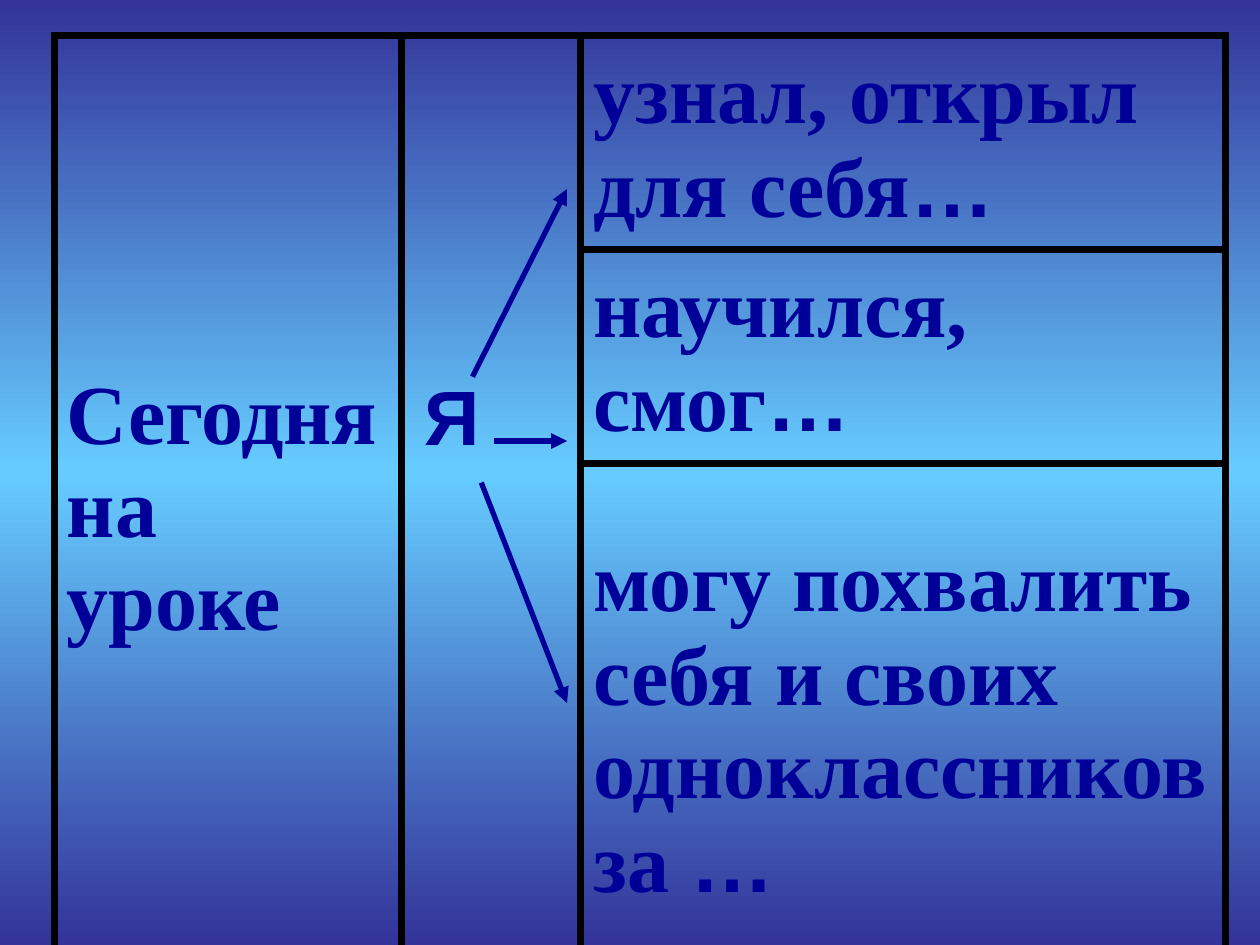
from copy import deepcopy
from dataclasses import dataclass

from lxml import etree
from pptx import Presentation
from pptx.dml.color import RGBColor
from pptx.enum.shapes import MSO_CONNECTOR
from pptx.enum.text import MSO_ANCHOR
from pptx.oxml.ns import qn
from pptx.util import Inches, Pt

STRAIGHT = MSO_CONNECTOR.STRAIGHT
MIDDLE = MSO_ANCHOR.MIDDLE


@dataclass(frozen=True)
class Theme:
    ink: str = "000099"
    border: str = "000000"
    edge: str = "333399"
    glow: str = "66CCFF"
    serif: str = "Times New Roman"
    sans: str = "Arial"
    phrase_size: int = 48
    pronoun_size: int = 44
    border_width: float = 4.5
    arrow_width: float = 3


@dataclass(frozen=True)
class Arrow:
    start: tuple[float, float]
    end: tuple[float, float]


THEME = Theme()
COLUMN_WIDTHS = (2.76, 1.42, 5.12)
ROW_HEIGHTS = (1.7, 1.7, 4.13)
OPENING = "Сегодня на уроке"
ENDINGS = (
    "узнал, открыл для себя",
    "научился, смог",
    "могу похвалить себя и своих одноклассников за ",
)
ARROWS = (
    Arrow((3.75, 2.99), (4.5, 1.5)),
    Arrow((3.82, 3.83), (4.5, 5.58)),
    Arrow((3.92, 3.5), (4.5, 3.5)),
)


def add_text(paragraph, text: str, *, font: str = THEME.serif,
             size: float = THEME.phrase_size) -> None:
    run = paragraph.add_run()
    run.text = text
    run.font.name = font
    run.font.size = Pt(size)
    run.font.bold = True
    run.font.color.rgb = RGBColor.from_string(THEME.ink)


def paint_background(slide) -> None:
    """Vertical gradient that is brightest halfway down."""
    fill = slide.background.fill
    fill.gradient()
    fill.gradient_angle = 90
    first, last = fill.gradient_stops
    for stop in (first, last):
        stop.color.rgb = RGBColor.from_string(THEME.edge)
    first.position, last.position = 0, 1
    stop_list = fill._fill._gradFill.find(qn("a:gsLst"))
    stop_list.insert(1, deepcopy(stop_list[0]))
    middle = fill.gradient_stops[1]
    middle.position = 0.5
    middle.color.rgb = RGBColor.from_string(THEME.glow)


def format_cell(cell) -> None:
    cell.fill.background()
    cell.vertical_anchor = MIDDLE
    properties = cell._tc.get_or_add_tcPr()
    for index, side in enumerate(("a:lnL", "a:lnR", "a:lnT", "a:lnB")):
        line = etree.Element(qn(side), w=str(Pt(THEME.border_width)))
        solid = etree.SubElement(line, qn("a:solidFill"))
        etree.SubElement(solid, qn("a:srgbClr"), val=THEME.border)
        properties.insert(index, line)


def add_sentence_table(slide) -> None:
    table = slide.shapes.add_table(
        len(ROW_HEIGHTS), len(COLUMN_WIDTHS), Inches(0.43), Inches(0.28),
        Inches(sum(COLUMN_WIDTHS)), Inches(sum(ROW_HEIGHTS))).table
    table.first_row = table.horz_banding = False
    for column, width in zip(table.columns, COLUMN_WIDTHS):
        column.width = Inches(width)
    for row, height in zip(table.rows, ROW_HEIGHTS):
        row.height = Inches(height)
    for cell in table.iter_cells():
        format_cell(cell)

    last_row = len(ROW_HEIGHTS) - 1
    for column in (0, 1):
        table.cell(0, column).merge(table.cell(last_row, column))
    add_text(table.cell(0, 0).text_frame.paragraphs[0], OPENING)
    for row, ending in enumerate(ENDINGS):
        paragraph = table.cell(row, 2).text_frame.paragraphs[0]
        add_text(paragraph, ending)
        add_text(paragraph, "…", font=THEME.sans)


def add_pronoun(slide) -> None:
    frame = slide.shapes.add_textbox(
        Inches(3.27), Inches(2.88), Inches(1.18), Inches(0.83)).text_frame
    frame.word_wrap = True
    frame.vertical_anchor = MIDDLE
    add_text(frame.paragraphs[0], "Я", font=THEME.sans, size=THEME.pronoun_size)


def add_arrow(slide, arrow: Arrow) -> None:
    connector = slide.shapes.add_connector(
        STRAIGHT, *(Inches(value) for value in arrow.start + arrow.end))
    connector.line.color.rgb = RGBColor.from_string(THEME.ink)
    connector.line.width = Pt(THEME.arrow_width)
    etree.SubElement(connector.line._get_or_add_ln(), qn("a:tailEnd"), type="triangle")
    etree.SubElement(connector._element.spPr, qn("a:effectLst"))


def main() -> None:
    presentation = Presentation()
    presentation.slide_width = Inches(10)
    presentation.slide_height = Inches(7.5)
    slide = presentation.slides.add_slide(presentation.slide_layouts[6])
    paint_background(slide)
    add_sentence_table(slide)
    add_pronoun(slide)
    for arrow in ARROWS:
        add_arrow(slide, arrow)
    presentation.save("out.pptx")


if __name__ == "__main__":
    main()
